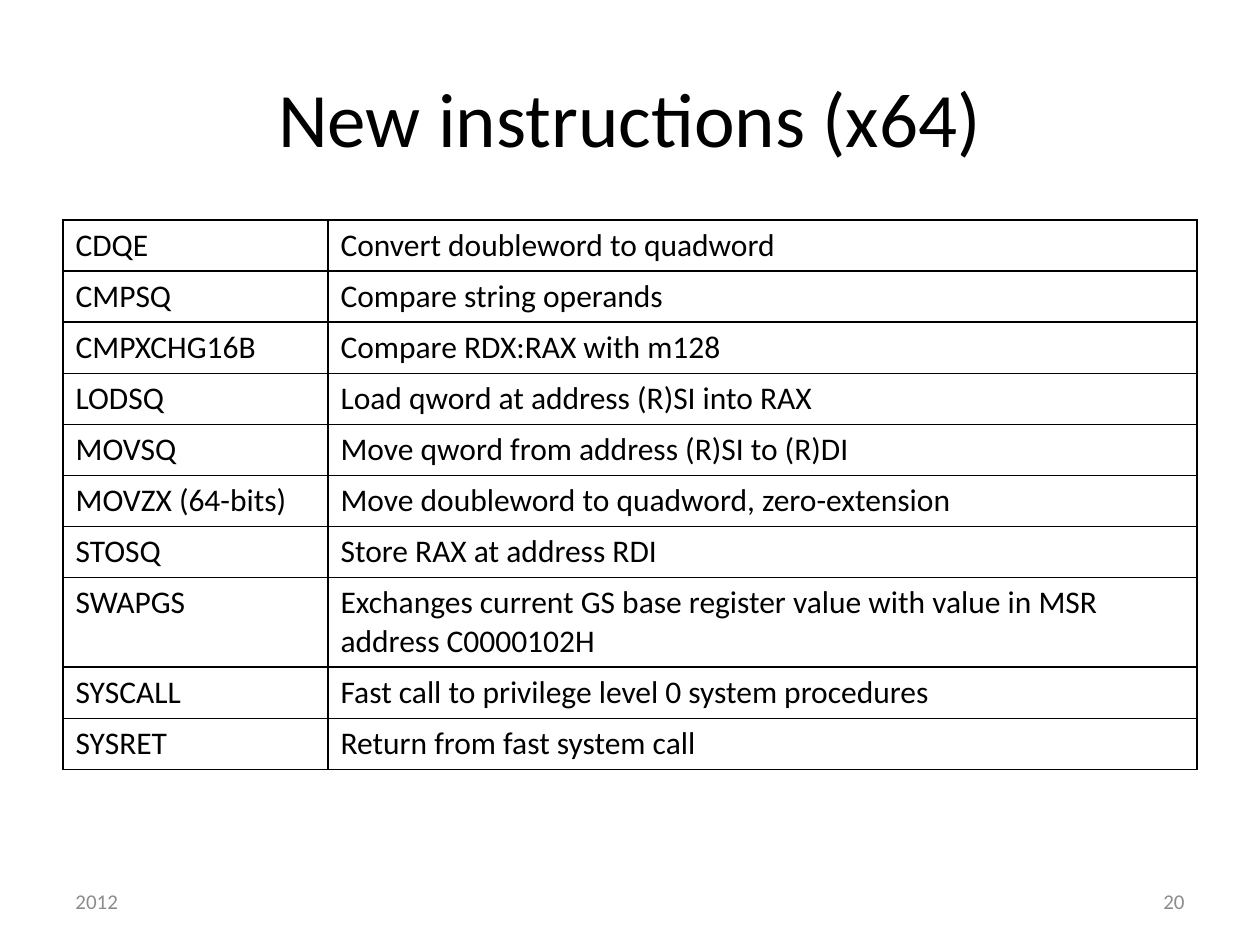
"""Build a slide that lists the new x64 instructions in a table."""
from lxml import etree
from pptx import Presentation
from pptx.dml.color import RGBColor
from pptx.enum.text import MSO_ANCHOR, PP_ALIGN
from pptx.oxml.ns import qn
from pptx.util import Pt

SCALE = 914400 / 126
LEFT, MID, RIGHT = PP_ALIGN.LEFT, PP_ALIGN.CENTER, PP_ALIGN.RIGHT
CENTRE = MSO_ANCHOR.MIDDLE
COLOURS = {"ink": "000000", "grey": "8C8C8C"}
FONT = "Calibri"
TITLE_ONLY = 5
ROW, TALL = 51, 89

ROWS = [
    ("CDQE", "Convert doubleword to quadword"),
    ("CMPSQ", "Compare string operands"),
    ("CMPXCHG16B", "Compare RDX:RAX with m128"),
    ("LODSQ", "Load qword at address (R)SI into RAX"),
    ("MOVSQ", "Move qword from address (R)SI to (R)DI"),
    ("MOVZX (64-bits)", "Move doubleword to quadword, zero-extension"),
    ("STOSQ", "Store RAX at address RDI"),
    ("SWAPGS", "Exchanges current GS base register value with value in MSR address C0000102H"),
    ("SYSCALL", "Fast call to privilege level 0 system procedures"),
    ("SYSRET", "Return from fast system call"),
]


def px(n):
    return round(n * SCALE)


def write(frame, text, size=18, colour="ink", align=LEFT):
    frame.word_wrap = True
    para = frame.paragraphs[0]
    para.alignment = align
    run = para.add_run()
    run.text = text
    run.font.name = FONT
    run.font.size = Pt(size)
    run.font.color.rgb = RGBColor.from_string(COLOURS[colour])


def border(cell, width=1):
    props = cell._tc.get_or_add_tcPr()
    for side in ("lnL", "lnR", "lnT", "lnB"):
        line = etree.SubElement(props, qn(f"a:{side}"), w=str(Pt(width)))
        fill = etree.SubElement(line, qn("a:solidFill"))
        etree.SubElement(fill, qn("a:srgbClr"), val=COLOURS["ink"])


class Deck:
    def __init__(self, wide, high):
        self.prs = Presentation()
        self.prs.slide_width, self.prs.slide_height = px(wide), px(high)
        self.slide = self.prs.slides.add_slide(self.prs.slide_layouts[TITLE_ONLY])

    def title(self, text, x, y, w, h):
        shape = self.slide.shapes.title
        shape.left, shape.top, shape.width, shape.height = map(px, (x, y, w, h))
        shape.text_frame.vertical_anchor = CENTRE
        write(shape.text_frame, text, size=44, align=MID)

    def label(self, text, x, y, w, h, **style):
        frame = self.slide.shapes.add_textbox(*map(px, (x, y, w, h))).text_frame
        frame.vertical_anchor = CENTRE
        write(frame, text, **style)

    def table(self, rows, x, y, cols, highs):
        box = map(px, (x, y, sum(cols), sum(highs)))
        table = self.slide.shapes.add_table(len(rows), len(cols), *box).table
        table.first_row = table.horz_banding = False
        for col, w in zip(table.columns, cols):
            col.width = px(w)
        for row, h, texts in zip(table.rows, highs, rows):
            row.height = px(h)
            for cell, text in zip(row.cells, texts):
                border(cell)
                cell.fill.background()
                write(cell.text_frame, text)


def main():
    deck = Deck(1260, 945)
    deck.title("New instructions (x64)", 63, 38, 1134, 157)
    highs = [TALL if name == "SWAPGS" else ROW for name, _ in ROWS]
    deck.table(ROWS, 63, 220, (265, 869), highs)
    for text, x, align in (("2012", 63, LEFT), ("20", 903, RIGHT)):
        deck.label(text, x, 876, 294, 50, size=12, colour="grey", align=align)
    deck.prs.save("out.pptx")


if __name__ == "__main__":
    main()
